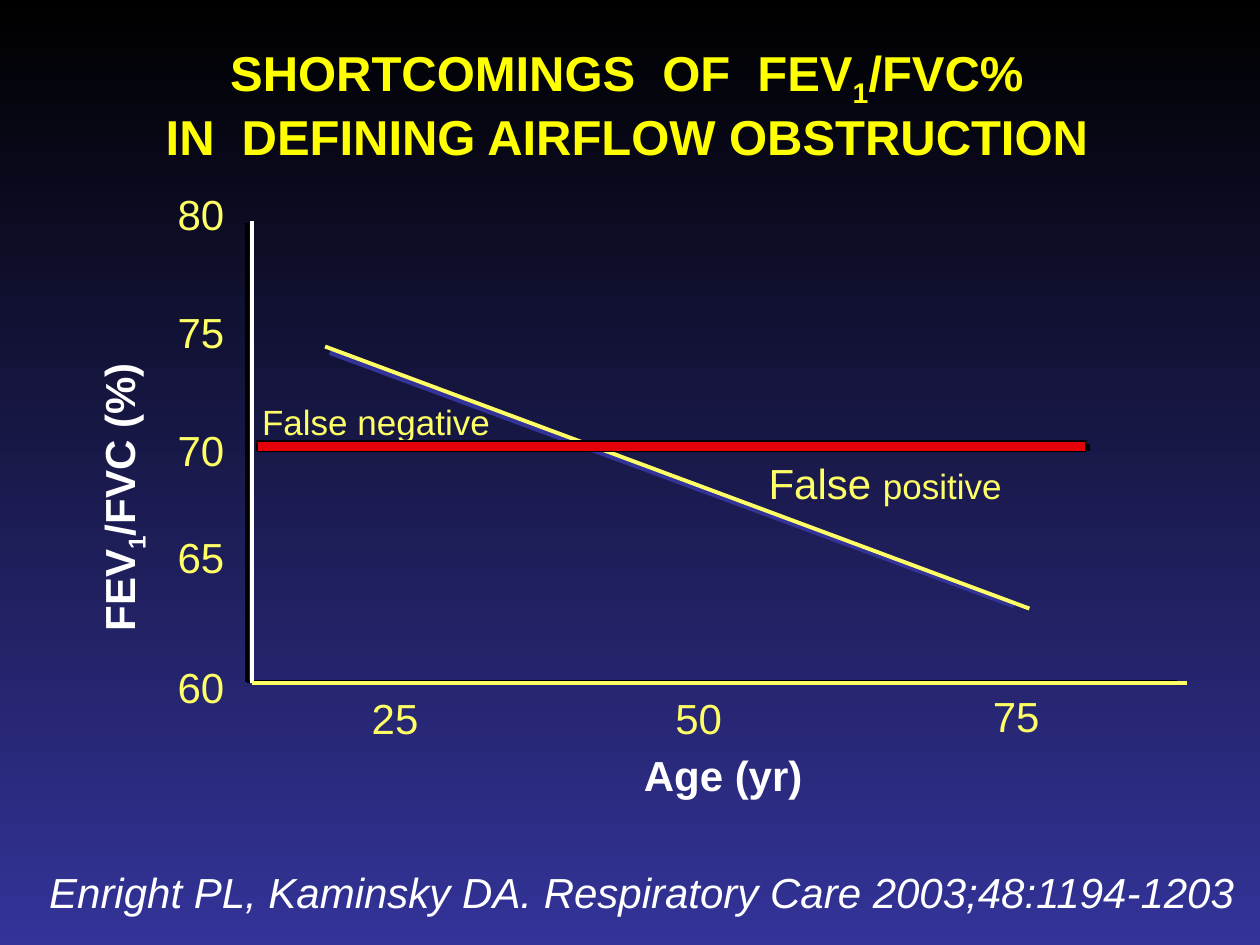
from dataclasses import dataclass

from lxml import etree
from pptx import Presentation
from pptx.dml.color import RGBColor
from pptx.enum.dml import MSO_LINE
from pptx.enum.shapes import MSO_CONNECTOR, MSO_SHAPE
from pptx.enum.text import MSO_ANCHOR, MSO_AUTO_SIZE, PP_ALIGN
from pptx.oxml.ns import qn
from pptx.util import Inches, Pt

STRAIGHT, RECTANGLE = MSO_CONNECTOR.STRAIGHT, MSO_SHAPE.RECTANGLE
TOP, BOTTOM = MSO_ANCHOR.TOP, MSO_ANCHOR.BOTTOM
LEFT, CENTER = PP_ALIGN.LEFT, PP_ALIGN.CENTER
DASH = MSO_LINE.DASH
NO_FIT, GROW = MSO_AUTO_SIZE.NONE, MSO_AUTO_SIZE.SHAPE_TO_FIT_TEXT

COLORS = {
    "black": "000000", "navy": "333399", "title": "FFFF00",
    "yellow": "FFFF66", "white": "FFFFFF", "threshold": "E30209",
}
FONT = "Arial"
SLIDE_WIDTH, SLIDE_HEIGHT = Inches(10), Inches(7.5)
COLUMN, ROW = SLIDE_WIDTH / 100, SLIDE_HEIGHT / 75
TICK_WIDTH, LABEL_HEIGHT = 3.8, 4


@dataclass
class Piece:
    """A stretch of text in one style."""
    text: str
    size: float = 24
    subscript: bool = False


@dataclass
class Label:
    """A text with its grid box and look."""
    pieces: list[Piece]
    box: tuple[float, float, float, float]
    color: str = "yellow"
    bold: bool = False
    italic: bool = False
    rotation: int = 0
    wrap: bool = False
    anchor: MSO_ANCHOR = TOP
    align: PP_ALIGN = LEFT


@dataclass
class Stroke:
    """A straight line between two grid points."""
    start: tuple[float, float]
    end: tuple[float, float]
    color: str
    weight: float
    dashed: bool = False


def rgb(name: str) -> RGBColor:
    """Look up a named colour."""
    return RGBColor.from_string(COLORS[name])


def grid(*box: float) -> list[int]:
    """Turn alternating columns and rows into lengths."""
    return [round(value * (ROW if index % 2 else COLUMN)) for index, value in enumerate(box)]


def write(holder, label: Label) -> None:
    """Place a text holder and fill it with a label."""
    holder.left, holder.top, holder.width, holder.height = grid(*label.box)
    holder.rotation = label.rotation
    frame = holder.text_frame
    frame.margin_left = frame.margin_top = frame.margin_right = frame.margin_bottom = 0
    frame.word_wrap = label.wrap
    frame.auto_size = NO_FIT if label.wrap else GROW
    frame.vertical_anchor = label.anchor
    paragraph = frame.paragraphs[0]
    paragraph.alignment = label.align
    for piece in label.pieces:
        if piece.text == "\n":
            paragraph.add_line_break()
            continue
        run = paragraph.add_run()
        run.text = piece.text
        font = run.font
        font.name, font.size = FONT, Pt(piece.size)
        font.bold, font.italic = label.bold, label.italic
        font.color.rgb = rgb(label.color)
        if piece.subscript:
            run._r.get_or_add_rPr().set("baseline", "-25000")


def draw_label(slide, label: Label) -> None:
    """Add a label as a text box."""
    write(slide.shapes.add_textbox(*grid(*label.box)), label)


def draw_stroke(slide, stroke: Stroke) -> None:
    """Add a line without shadow."""
    connector = slide.shapes.add_connector(STRAIGHT, *grid(*stroke.start, *stroke.end))
    connector.line.color.rgb = rgb(stroke.color)
    connector.line.width = Pt(stroke.weight)
    if stroke.dashed:
        connector.line.dash_style = DASH
    etree.SubElement(connector._element.spPr, qn("a:effectLst"))


def draw_threshold(slide) -> None:
    """Add the red bar at the fixed 70% cut-off."""
    bar = slide.shapes.add_shape(RECTANGLE, *grid(20.4, 35, 65.8, 0.83))
    bar.shadow.inherit = False
    bar.fill.solid()
    bar.fill.fore_color.rgb = rgb("threshold")
    bar.line.color.rgb = rgb("black")
    bar.line.width = Pt(0.75)


def paint_background(slide) -> None:
    """Fade the background from black down to navy."""
    fill = slide.background.fill
    fill.gradient()
    fill.gradient_angle = 270
    for stop, position, color in zip(fill.gradient_stops, (0, 1), ("black", "navy")):
        stop.position = position
        stop.color.rgb = rgb(color)


TITLE = Label(
    [Piece("SHORTCOMINGS  OF  FEV", 28), Piece("1", 28, True), Piece("/FVC%", 28),
     Piece("\n"), Piece("IN  DEFINING AIRFLOW OBSTRUCTION", 28)],
    (3.9, 3.9, 91.7, 9.2), "title", bold=True, wrap=True, anchor=BOTTOM, align=CENTER)
CITATION = Label(
    [Piece("Enright PL, Kaminsky DA. Respiratory Care 2003;48:1194-1203")],
    (3.9, 68.9, 96.1, 3.9), "white", italic=True, wrap=True, anchor=BOTTOM)
SHADOWS = [
    Stroke((19.6, 17.7), (19.6, 54.1), "black", 2),
    Stroke((19.6, 54.1), (93.4, 54.1), "black", 2),
    Stroke((26.2, 27.9), (80.5, 48), "navy", 4),
    Stroke((22.1, 35.5), (86.7, 35.5), "black", 4, dashed=True),
]
AGE_TICKS = {"25": (29.5, 55), "50": (53.6, 55), "75": (78.8, 54.8)}
RATIO_TICKS = {"60": 52.5, "65": 42.2, "70": 33.7, "75": 24.3, "80": 15}
TICKS = [(text, *corner) for text, corner in AGE_TICKS.items()]
TICKS += [(text, 14.1, row) for text, row in RATIO_TICKS.items()]
LABELS = [Label([Piece(text)], (column, row, TICK_WIDTH, LABEL_HEIGHT))
          for text, column, row in TICKS]
LABELS += [
    Label([Piece("Age (yr)")], (51.1, 59.5, 12.7, LABEL_HEIGHT), "white", bold=True),
    Label([Piece("FEV"), Piece("1", subscript=True), Piece("/FVC (%)")],
          (-1.8, 36.9, 22.4, LABEL_HEIGHT), "white", bold=True, rotation=270),
    Label([Piece("False "), Piece("positive", 20)], (61, 36.3, 18.7, LABEL_HEIGHT)),
    Label([Piece("False negative", 20)], (20.8, 31.8, 18.2, 3.4)),
]
LINES = [
    Stroke((25.8, 27.5), (81.7, 48.3), "yellow", 2.25),
    Stroke((20, 17.5), (20, 54.2), "white", 2.75),
    Stroke((20, 54.2), (94.2, 54.2), "yellow", 2.5),
]


def main() -> None:
    """Build and save the slide."""
    deck = Presentation()
    deck.slide_width, deck.slide_height = SLIDE_WIDTH, SLIDE_HEIGHT
    slide = deck.slides.add_slide(deck.slide_layouts[5])
    paint_background(slide)
    write(slide.shapes.title, TITLE)
    slide.shapes.title.text_frame.paragraphs[0].line_spacing = Pt(32)
    draw_label(slide, CITATION)
    for shadow in SHADOWS:
        draw_stroke(slide, shadow)
    for label in LABELS:
        draw_label(slide, label)
    for line in LINES:
        draw_stroke(slide, line)
    draw_threshold(slide)
    deck.save("out.pptx")


if __name__ == "__main__":
    main()
